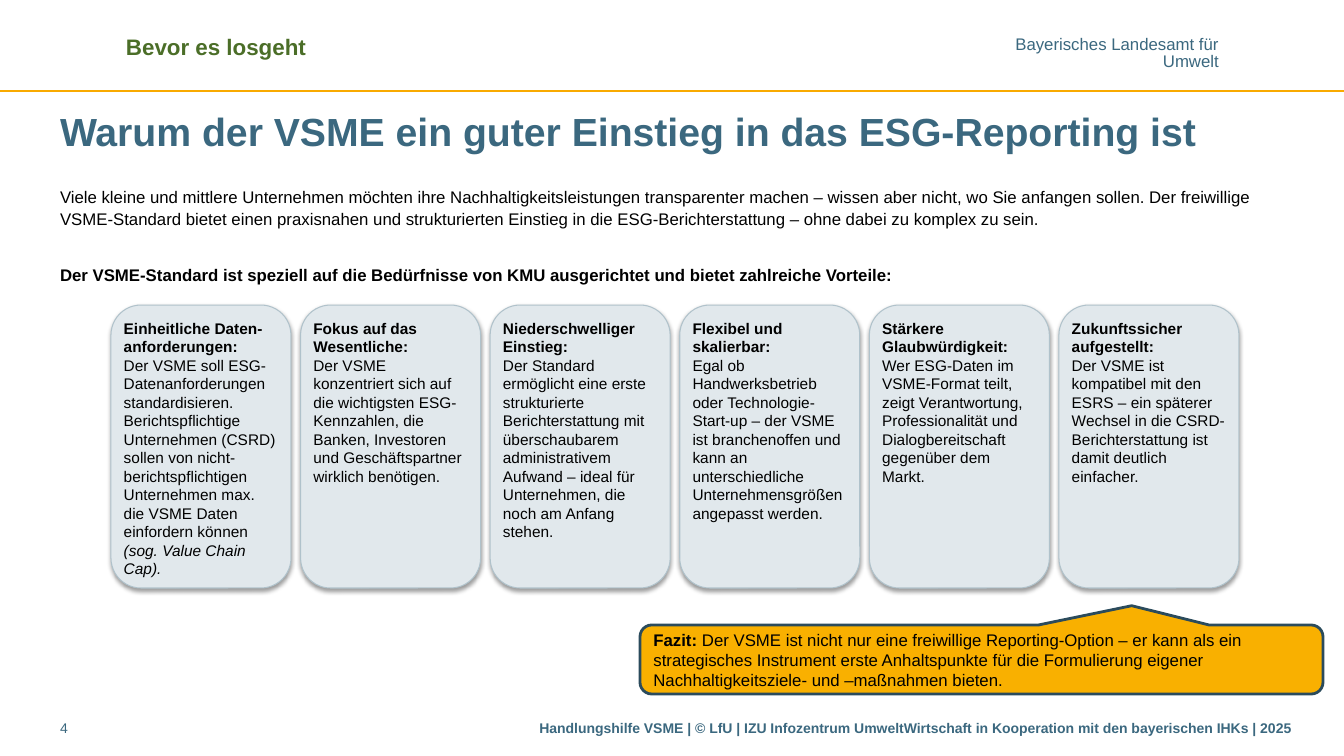
from dataclasses import dataclass
from lxml import etree
from pptx import Presentation, util as u
from pptx.dml.color import RGBColor
from pptx.enum import shapes, text
from pptx.oxml.ns import qn

SCALE = 914400 / 100.8  # EMU per px
SHAPE, ALIGN, ANCHOR = shapes.MSO_SHAPE, text.PP_ALIGN, text.MSO_ANCHOR


@dataclass(frozen=True)
class Theme:
    font: str = "Arial"
    ink: str = "000000"
    blue: str = "3B687F"
    navy: str = "2B4B5C"
    green: str = "4B6E28"
    rule: str = "F9AA00"
    gold: str = "F9B000"
    card: str = "E1E8EC"
    edge: str = "B0C2CB"
    title: int = 28
    head: int = 16
    body: int = 12
    small: int = 11
    foot: int = 10


T = Theme()

INTRO = (
    "Viele kleine und mittlere Unternehmen möchten ihre Nachhaltigkeitsleistungen transparenter machen – "
    "wissen aber nicht, wo Sie anfangen sollen. Der freiwillige VSME-Standard bietet einen praxisnahen und "
    "strukturierten Einstieg in die ESG-Berichterstattung – ohne dabei zu komplex zu sein.")
LEAD = "Der VSME-Standard ist speziell auf die Bedürfnisse von KMU ausgerichtet und bietet zahlreiche Vorteile:"
CARDS = [
    ("Einheitliche Daten-anforderungen:",
     "Der VSME soll ESG-Datenanforderungen standardisieren. Berichtspflichtige Unternehmen (CSRD) sollen von "
     "nicht-berichtspflichtigen Unternehmen max. die VSME Daten einfordern können ",
     "(sog. Value Chain Cap)."),
    ("Fokus auf das Wesentliche:",
     "Der VSME konzentriert sich auf die wichtigsten ESG-Kennzahlen, die Banken, Investoren und "
     "Geschäftspartner wirklich benötigen.", ""),
    ("Niederschwelliger Einstieg:",
     "Der Standard ermöglicht eine erste strukturierte Berichterstattung mit überschaubarem administrativem "
     "Aufwand – ideal für Unternehmen, die noch am Anfang stehen.", ""),
    ("Flexibel und skalierbar:",
     "Egal ob Handwerksbetrieb oder Technologie-Start-up – der VSME ist branchenoffen und kann an "
     "unterschiedliche Unternehmensgrößen angepasst werden.", ""),
    ("Stärkere Glaubwürdigkeit:",
     "Wer ESG-Daten im VSME-Format teilt, zeigt Verantwortung, Professionalität und Dialogbereitschaft "
     "gegenüber dem Markt.", ""),
    ("Zukunftssicher aufgestellt:",
     "Der VSME ist kompatibel mit den ESRS – ein späterer Wechsel in die CSRD-Berichterstattung ist damit "
     "deutlich einfacher.", ""),
]
VERDICT = (
    " Der VSME ist nicht nur eine freiwillige Reporting-Option – er kann als ein strategisches Instrument erste "
    "Anhaltspunkte für die Formulierung eigener Nachhaltigkeitsziele- und –maßnahmen bieten.")
FOOTER = ("Handlungshilfe VSME | © LfU | IZU\u00a0Infozentrum UmweltWirtschaft in Kooperation mit den "
          "bayerischen IHKs | 2025")


def px(n):
    return u.Emu(round(n * SCALE))


def paint(fmt, color):
    """Give a fill or a line one solid colour."""
    fill = getattr(fmt, "fill", fmt)
    fill.solid()
    fill.fore_color.rgb = RGBColor.from_string(color)


def place(shape, box):
    shape.left, shape.top, shape.width, shape.height = map(px, box)


def setup(frame, side=10, ends=5, anchor=ANCHOR.TOP):
    """Set wrapping, insets and anchor of a text frame."""
    frame.word_wrap = True
    frame.auto_size = text.MSO_AUTO_SIZE.NONE
    frame.margin_left = frame.margin_right = px(side)
    frame.margin_top = frame.margin_bottom = px(ends)
    frame.vertical_anchor = anchor


def write(para, words, size, color=T.ink, bold=None, align=ALIGN.LEFT):
    para.text = words
    para.alignment = align
    font = para.font
    font.name, font.size, font.bold = T.font, u.Pt(size), bold
    font.color.rgb = RGBColor.from_string(color)


def label(slide, box, lines, size, color, bold=False, align=ALIGN.LEFT, side=10, ends=5):
    area = slide.shapes.add_textbox(*map(px, box))
    frame = area.text_frame
    setup(frame, side, ends)
    for i, line in enumerate(lines):
        para = frame.add_paragraph() if i else frame.paragraphs[0]
        write(para, line, size, color, bold, align)
    return frame


def panel(slide, kind, box, fill, edge, weight):
    shape = slide.shapes.add_shape(kind, *map(px, box))
    shape.shadow.inherit = False
    paint(shape.fill, fill)
    paint(shape.line, edge)
    shape.line.width = u.Pt(weight)
    return shape


def shade(shape):
    """Add a soft shadow below a shape."""
    effects = shape._element.spPr.find(qn("a:effectLst"))
    outer = etree.SubElement(effects, qn("a:outerShdw"), blurRad=str(u.Pt(3.1)), dist=str(u.Pt(1.6)),
                             dir="5400000", algn="t", rotWithShape="0")
    black = etree.SubElement(outer, qn("a:srgbClr"), val=T.ink)
    etree.SubElement(black, qn("a:alpha"), val="38000")


def header(slide, box):
    x, y, w, h = box
    line = slide.shapes.add_connector(shapes.MSO_CONNECTOR.STRAIGHT, *map(px, (x, y + h, x + w, y + h)))
    paint(line.line, T.rule)
    line.line.width = u.Pt(2)
    etree.SubElement(line._element.spPr, qn("a:effectLst"))
    office = label(slide, (x + 1000, y + 37, 219, 34), ["Bayerisches Landesamt für", "Umwelt"],
                   T.body, T.blue, align=ALIGN.RIGHT, side=0, ends=0)
    for para in office.paragraphs:
        para.line_spacing = 0.85
    label(slide, (x + 116, y + 28, 373, 37), ["Bevor es losgeht"], T.head, T.green, True)


def title(slide, box):
    head = slide.shapes.title
    place(head, box)
    setup(head.text_frame, 0, 5, ANCHOR.MIDDLE)
    write(head.text_frame.paragraphs[0], "Warum der VSME ein guter Einstieg in das ESG-Reporting ist",
          T.title, T.blue, True)


def intro(slide, box):
    body = slide.placeholders[1]
    place(body, box)
    frame = body.text_frame
    setup(frame, 0)
    for para, words, bold, gap in ((frame.paragraphs[0], INTRO, False, 0),
                                   (frame.add_paragraph(), LEAD, True, 24)):
        props = para._p.get_or_add_pPr()
        props.set("marL", "0")
        props.set("indent", "0")
        etree.SubElement(props, qn("a:buNone"))
        write(para, words, T.body, bold=bold)
        para.line_spacing, para.space_before = u.Pt(16), u.Pt(gap)


def cards(slide, box, wide=180):
    x, y, w, h = box
    step = (w - wide) / (len(CARDS) - 1)
    for i, (name, words, aside) in enumerate(CARDS):
        card = panel(slide, SHAPE.ROUNDED_RECTANGLE, (x + i * step, y, wide, h), T.card, T.edge, 0.75)
        shade(card)
        frame = card.text_frame
        setup(frame, 4)
        write(frame.paragraphs[0], name, T.small, bold=True)
        para = frame.add_paragraph()
        write(para, words, T.small)
        if aside:
            run = para.add_run()
            run.text, run.font.italic = aside, True


def verdict(slide, box):
    note = panel(slide, SHAPE.ROUNDED_RECTANGULAR_CALLOUT, box, T.gold, T.navy, 2)
    for i, value in enumerate((0.22, -0.78, 0.17)):
        note.adjustments[i] = value
    setup(note.text_frame, anchor=ANCHOR.MIDDLE)
    para = note.text_frame.paragraphs[0]
    write(para, "Fazit:", T.body)
    para.runs[0].font.bold = True
    para.add_run().text = VERDICT


def footer(slide, box):
    x, y, w, h = box
    label(slide, (x, y, 71, h), ["4"], T.foot, T.blue, side=0)
    label(slide, (x + 461, y, w - 461, h), [FOOTER], T.foot, T.blue, True, ALIGN.RIGHT)


def main():
    deck = Presentation()
    deck.slide_width, deck.slide_height = px(1344), px(756)
    slide = deck.slides.add_slide(deck.slide_layouts[1])
    header(slide, (0, 0, 1344, 91))
    title(slide, (60, 103, 1241, 55))
    intro(slide, (60, 179, 1241, 518))
    footer(slide, (60, 714, 1241, 31))
    verdict(slide, (640, 625, 683, 69))
    cards(slide, (111, 305, 1128, 283))
    deck.save("out.pptx")


if __name__ == "__main__":
    main()
